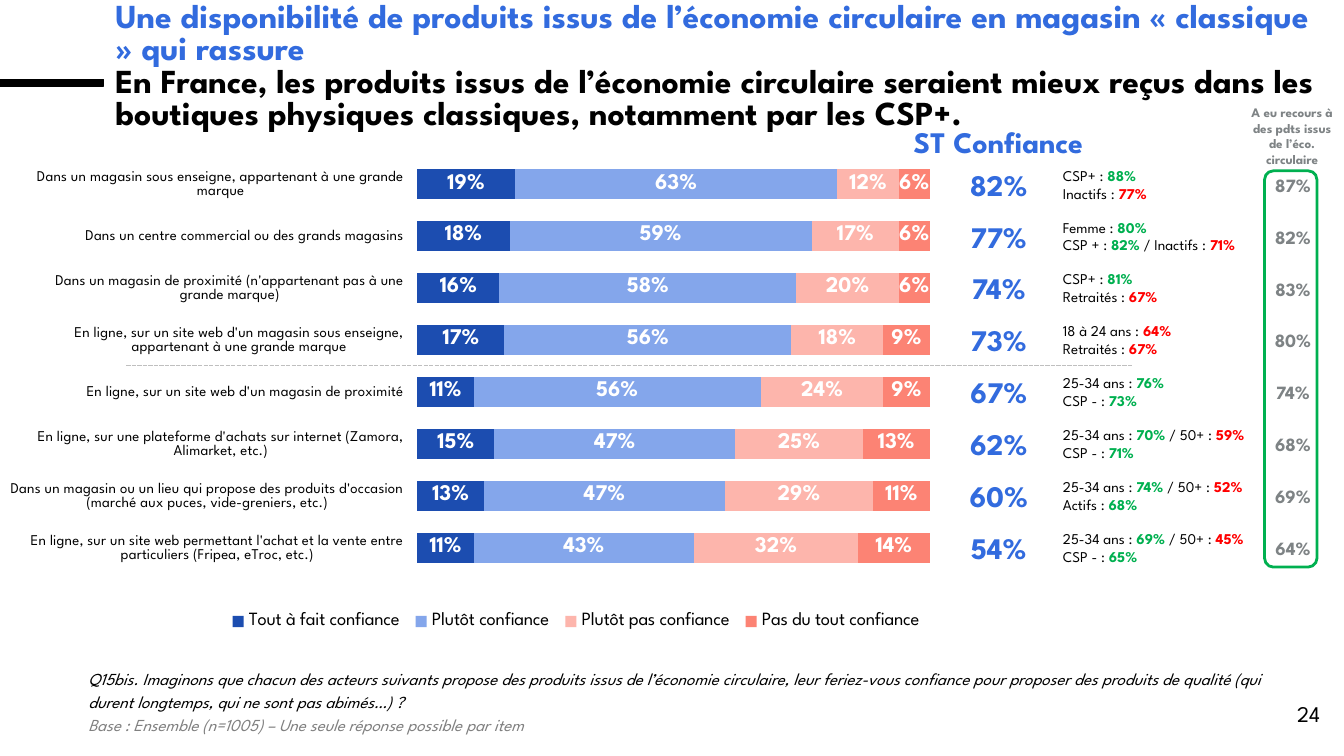
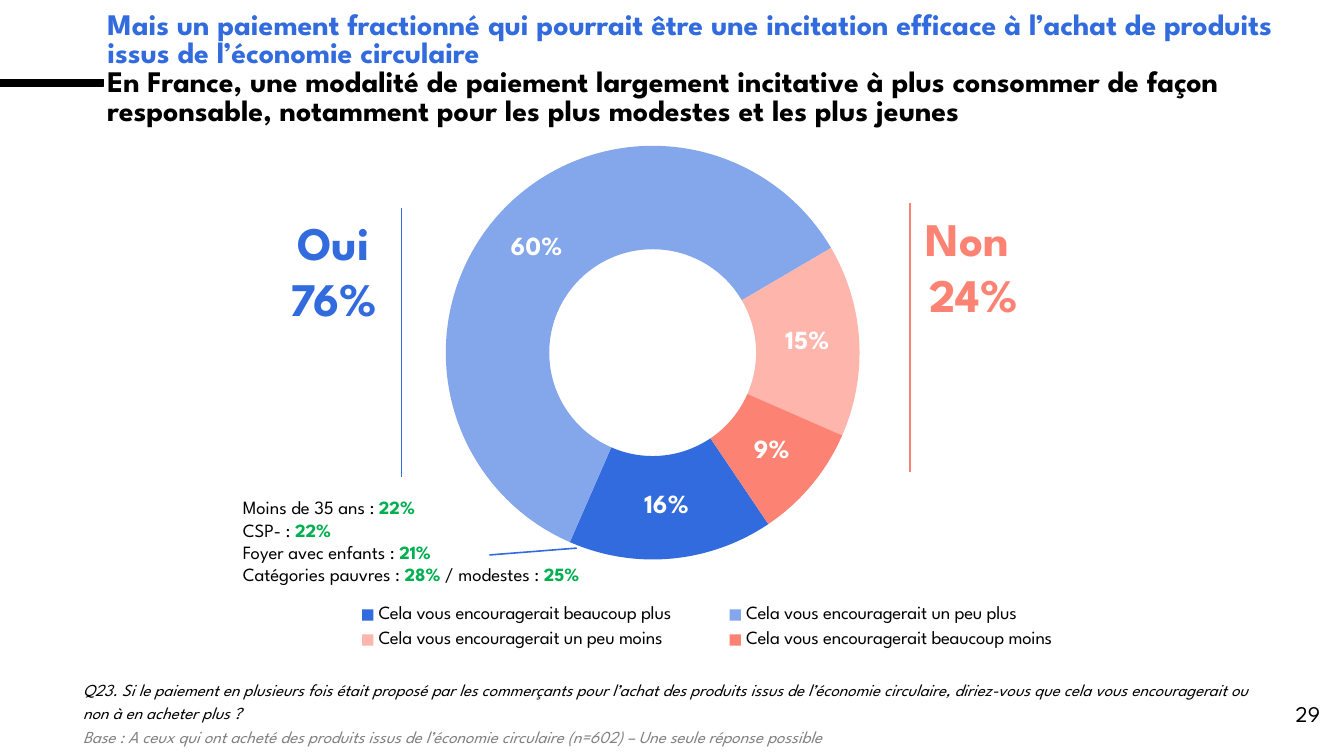
"""Build two survey slides about trust in circular-economy products."""
from dataclasses import dataclass
from typing import NamedTuple

from lxml import etree
from pptx import Presentation
from pptx.chart.chart import Chart
from pptx.chart.data import CategoryChartData
from pptx.dml.color import RGBColor
from pptx.enum.chart import XL_CHART_TYPE, XL_LEGEND_POSITION
from pptx.enum.dml import MSO_LINE
from pptx.enum.shapes import MSO_CONNECTOR, MSO_SHAPE
from pptx.enum.text import MSO_ANCHOR, MSO_AUTO_SIZE, PP_ALIGN
from pptx.oxml.ns import qn
from pptx.slide import Slide
from pptx.text.text import Font, TextFrame
from pptx.util import Cm, Pt

STACKED_BARS = XL_CHART_TYPE.BAR_STACKED_100
DOUGHNUT = XL_CHART_TYPE.DOUGHNUT
LEGEND_BOTTOM = XL_LEGEND_POSITION.BOTTOM
LEGEND_RIGHT = XL_LEGEND_POSITION.RIGHT
STRAIGHT = MSO_CONNECTOR.STRAIGHT
RECTANGLE = MSO_SHAPE.RECTANGLE
ROUNDED = MSO_SHAPE.ROUNDED_RECTANGLE
DASHED = MSO_LINE.SQUARE_DOT
LEFT, CENTER, RIGHT = PP_ALIGN.LEFT, PP_ALIGN.CENTER, PP_ALIGN.RIGHT
TOP, MIDDLE = MSO_ANCHOR.TOP, MSO_ANCHOR.MIDDLE
NO_FIT, GROW = MSO_AUTO_SIZE.NONE, MSO_AUTO_SIZE.SHAPE_TO_FIT_TEXT

FONT = "League Spartan"
BLACK = RGBColor(0x00, 0x00, 0x00)
WHITE = RGBColor(0xFF, 0xFF, 0xFF)
NAVY = RGBColor(0x1C, 0x4D, 0xB0)
BLUE = RGBColor(0x32, 0x6B, 0xDE)
LIGHT_BLUE = RGBColor(0x84, 0xA6, 0xEB)
PINK = RGBColor(0xFD, 0xB5, 0xAC)
CORAL = RGBColor(0xFC, 0x83, 0x74)
GREEN = RGBColor(0x00, 0xB0, 0x50)
RED = RGBColor(0xFF, 0x00, 0x00)
BASE_GRAY = RGBColor(0x80, 0x80, 0x80)
USER_GRAY = RGBColor(0x7E, 0x83, 0x85)
DASH_GRAY = RGBColor(0xBF, 0xBF, 0xBF)

ROW_PITCH = 0.98
SCORE_TOP = 3.02
USER_TOP = 3.16


class Box(NamedTuple):
    """Left, top, width and height in centimetres."""
    left: float
    top: float
    width: float
    height: float

    def lengths(self) -> list[Cm]:
        """Return the four measures as lengths."""
        return [Cm(value) for value in self]


class Span(NamedTuple):
    """A stretch of text in one colour and weight."""
    text: str
    color: RGBColor = BLACK
    bold: bool = False


@dataclass
class Style:
    """Look of a text box."""
    size: float
    color: RGBColor = BLACK
    bold: bool = False
    italic: bool = False
    align: PP_ALIGN = LEFT
    spacing: float = 1.0


@dataclass
class Place:
    """One place of sale: label, answers in percent, totals and subgroups."""
    label: str
    answers: tuple[int, ...]
    trust: int
    users: int
    note: list[list[Span]]


def plain(text: str) -> Span:
    """Return an ordinary span."""
    return Span(text)


def high(percent: int) -> Span:
    """Return a percentage above average."""
    return Span(f"{percent}%", GREEN, True)


def low(percent: int) -> Span:
    """Return a percentage below average."""
    return Span(f"{percent}%", RED, True)


PLACES = [
    Place("Dans un magasin sous enseigne, appartenant à une grande marque",
          (19, 63, 12, 6), 82, 87,
          [[plain("CSP+ : "), high(88)], [plain("Inactifs : "), low(77)]]),
    Place("Dans un centre commercial ou des grands magasins",
          (18, 59, 17, 6), 77, 82,
          [[plain("Femme : "), high(80)],
           [plain("CSP + : "), high(82), plain(" / Inactifs : "), low(71)]]),
    Place("Dans un magasin de proximité (n'appartenant pas à une grande marque)",
          (16, 58, 20, 6), 74, 83,
          [[plain("CSP+ : "), high(81)], [plain("Retraités : "), low(67)]]),
    Place("En ligne, sur un site web d'un magasin sous enseigne, appartenant à une grande marque",
          (17, 56, 18, 9), 73, 80,
          [[plain("18 à 24 ans : "), low(64)], [plain("Retraités : "), low(67)]]),
    Place("En ligne, sur un site web d'un magasin de proximité",
          (11, 56, 24, 9), 67, 74,
          [[plain("25-34 ans : "), high(76)], [plain("CSP - : "), high(73)]]),
    Place("En ligne, sur une plateforme d'achats sur internet (Zamora, Alimarket, etc.)",
          (15, 47, 25, 13), 62, 68,
          [[plain("25-34 ans : "), high(70), plain(" / 50+ : "), low(59)],
           [plain("CSP - : "), high(71)]]),
    Place("Dans un magasin ou un lieu qui propose des produits d'occasion "
          "(marché aux puces, vide-greniers, etc.)",
          (13, 47, 29, 11), 60, 69,
          [[plain("25-34 ans : "), high(74), plain(" / 50+ : "), low(52)],
           [plain("Actifs : "), high(68)]]),
    Place("En ligne, sur un site web permettant l'achat et la vente entre "
          "particuliers (Fripea, eTroc, etc.)",
          (11, 43, 32, 14), 54, 64,
          [[plain("25-34 ans : "), high(69), plain(" / 50+ : "), low(45)],
           [plain("CSP - : "), high(65)]]),
]
TRUST_LEVELS = [("Tout à fait confiance", NAVY), ("Plutôt confiance", LIGHT_BLUE),
                ("Plutôt pas confiance", PINK), ("Pas du tout confiance", CORAL)]
INCENTIVES = [("Cela vous encouragerait beaucoup plus", 0.16, BLUE),
              ("Cela vous encouragerait un peu plus", 0.6, LIGHT_BLUE),
              ("Cela vous encouragerait un peu moins", 0.15, PINK),
              ("Cela vous encouragerait beaucoup moins", 0.09, CORAL)]
INCENTIVE_NOTE = [
    [plain("Moins de 35 ans : "), high(22)],
    [plain("CSP- : "), high(22)],
    [plain("Foyer avec enfants : "), high(21)],
    [plain("Catégories pauvres : "), high(28), plain(" / modestes : "), high(25)],
]


def set_font(font: Font, size: float, color: RGBColor, bold: bool = False,
             italic: bool = False) -> None:
    """Apply the deck font with a size, colour and weight."""
    font.name, font.size, font.bold, font.italic = FONT, Pt(size), bold, italic
    font.color.rgb = color


def add_frame(page: Slide, box: Box) -> TextFrame:
    """Add a wrapping text box that grows with its text."""
    frame = page.shapes.add_textbox(*box.lengths()).text_frame
    frame.word_wrap = True
    frame.auto_size = GROW
    return frame


def add_text(page: Slide, box: Box, text: str, style: Style) -> TextFrame:
    """Add a text box in one style."""
    frame = add_frame(page, box)
    frame.text = text
    for para in frame.paragraphs:
        para.alignment = style.align
        para.line_spacing = style.spacing
        for span in para.runs:
            set_font(span.font, style.size, style.color, style.bold, style.italic)
    return frame


def add_note(page: Slide, box: Box, lines: list[list[Span]], size: float) -> None:
    """Add a text box whose lines mix colours and weights."""
    frame = add_frame(page, box)
    for index, line in enumerate(lines):
        para = frame.add_paragraph() if index else frame.paragraphs[0]
        for part in line:
            span = para.add_run()
            span.text = part.text
            set_font(span.font, size, part.color, part.bold)


def add_line(page: Slide, start: tuple[float, float], end: tuple[float, float],
             color: RGBColor, width: float, dashed: bool = False) -> None:
    """Add a straight line without a shadow."""
    line = page.shapes.add_connector(STRAIGHT, *[Cm(value) for value in (*start, *end)])
    line.line.color.rgb = color
    line.line.width = Pt(width)
    if dashed:
        line.line.dash_style = DASHED
    etree.SubElement(line.element.spPr, qn("a:effectLst"))


def add_page(deck: Presentation, title: str, subtitle: str, title_box: Box, title_size: float,
             question: str, base: str, footer_box: Box, number: int) -> Slide:
    """Add a page with its band, two-part title, footer and number."""
    page = deck.slides.add_slide(deck.slide_layouts[5])
    band = page.shapes.add_shape(RECTANGLE, *Box(0, 1.5, 1.96, 0.13).lengths())
    band.shadow.inherit = False
    band.fill.solid()
    band.fill.fore_color.rgb = band.line.color.rgb = BLACK
    band.line.width = Pt(0.75)

    heading = page.shapes.title
    heading.left, heading.top, heading.width, heading.height = title_box.lengths()
    frame = heading.text_frame
    frame.text = f"{title}\v{subtitle}"
    frame.word_wrap, frame.auto_size, frame.vertical_anchor = True, NO_FIT, TOP
    frame.margin_left = frame.margin_top = frame.margin_right = frame.margin_bottom = 0
    para = frame.paragraphs[0]
    para.alignment, para.line_spacing = LEFT, 0.8
    for span, color in zip(para.runs, (BLUE, BLACK)):
        set_font(span.font, title_size, color, True)

    footer = add_text(page, footer_box, f"{question}\n{base}", Style(9, italic=True, spacing=1.15))
    footer.paragraphs[1].runs[0].font.color.rgb = BASE_GRAY
    folio = add_text(page, Box(23.52, 13.11, 1.68, 0.76), str(number), Style(12, align=RIGHT))
    folio.auto_size, folio.vertical_anchor = NO_FIT, MIDDLE
    return page


def set_layout(host: etree.ElementBase, index: int, area: Box, inner: bool) -> None:
    """Fix a chart part at fractions of the chart area."""
    for old in host.findall(qn("c:layout")):
        host.remove(old)
    layout = etree.Element(qn("c:layout"))
    host.insert(index, layout)
    manual = etree.SubElement(layout, qn("c:manualLayout"))
    settings = [("layoutTarget", "inner")] if inner else []
    settings += [("xMode", "edge"), ("yMode", "edge")]
    settings += zip("xywh", map(str, area))
    for tag, value in settings:
        etree.SubElement(manual, qn(f"c:{tag}")).set("val", value)


def add_chart(page: Slide, kind: XL_CHART_TYPE, box: Box, data: CategoryChartData,
              plot_area: Box, legend_area: Box, legend_side: XL_LEGEND_POSITION,
              label_size: float) -> Chart:
    """Add a chart with white percentage labels and a placed legend."""
    chart = page.shapes.add_chart(kind, *box.lengths(), data).chart
    set_font(chart.font, 18, BLACK)
    chart.has_title = False
    chart.has_legend = True
    chart.legend.position = legend_side
    chart.legend.include_in_layout = False
    set_font(chart.legend.font, 10, BLACK)
    set_layout(chart.element.xpath(".//c:plotArea")[0], 0, plot_area, True)
    set_layout(chart.element.xpath(".//c:legend")[0], 1, legend_area, False)
    for series in chart.plots[0].series:
        labels = series.data_labels
        labels.show_value = True
        labels.number_format, labels.number_format_is_linked = "0%", False
        set_font(labels.font, label_size, WHITE, True)
    return chart


def add_trust_chart(page: Slide) -> None:
    """Add the stacked bars of trust by place of sale."""
    data = CategoryChartData(number_format="0%")
    data.categories = [place.label for place in PLACES]
    for index, (name, _) in enumerate(TRUST_LEVELS):
        data.add_series(name, [place.answers[index] / 100 for place in PLACES])
    chart = add_chart(page, STACKED_BARS, Box(0.2, 2.79, 17.37, 9.53), data,
                      Box(0.435, 0.021, 0.565, 0.825), Box(0.22, 0.91, 0.78, 0.06),
                      LEGEND_BOTTOM, 12)
    plot = chart.plots[0]
    plot.gap_width, plot.overlap, plot.vary_by_categories = 70, 100, False
    for series, (_, color) in zip(plot.series, TRUST_LEVELS):
        series.format.fill.solid()
        series.format.fill.fore_color.rgb = color
    places, shares = chart.category_axis, chart.value_axis
    places.reverse_order = True
    places.format.line.fill.background()
    set_font(places.tick_labels.font, 8, BLACK)
    shares.minimum_scale, shares.maximum_scale = 0, 1
    shares.has_major_gridlines = shares.visible = False


def add_incentive_chart(page: Slide) -> None:
    """Add the ring of answers on split payment."""
    data = CategoryChartData(number_format="0%")
    data.categories = [name for name, _, _ in INCENTIVES]
    data.add_series("Series 1", [share for _, share, _ in INCENTIVES])
    chart = add_chart(page, DOUGHNUT, Box(2.36, 1.55, 21.16, 10.97), data,
                      Box(0.183, 0.11, 0.577, 0.713), Box(0.165, 0.89, 0.71, 0.1),
                      LEGEND_RIGHT, 14)
    chart.plots[0].vary_by_categories = True
    for index, (_, _, color) in enumerate(INCENTIVES):
        fill = chart.plots[0].series[0].points[index].format.fill
        fill.solid()
        fill.fore_color.rgb = color
    chart.element.xpath(".//c:firstSliceAng")[0].set("val", "146")
    chart.element.xpath(".//c:holeSize")[0].set("val", "60")


def build_trust_page(deck: Presentation) -> None:
    """Build the page on trust by place of sale."""
    page = add_page(
        deck,
        "Une disponibilité de produits issus de l’économie circulaire en magasin "
        "« classique » qui rassure",
        "En France, les produits issus de l’économie circulaire seraient mieux reçus dans les "
        "boutiques physiques classiques, notamment par les CSP+.",
        Box(2.18, 0.05, 23.01, 1.52), 18,
        "Q15bis. Imaginons que chacun des acteurs suivants propose des produits issus de "
        "l’économie circulaire, leur feriez-vous confiance pour proposer des produits de "
        "qualité (qui durent longtemps, qui ne sont pas abimés…) ?",
        "Base : Ensemble (n=1005) – Une seule réponse possible par item",
        Box(1.42, 12.45, 22.73, 1.55), 24)
    add_trust_chart(page)
    score_style = Style(16, BLUE, True, align=CENTER)
    user_style = Style(10, USER_GRAY, True, align=CENTER)
    add_text(page, Box(16.71, 2.21, 4.32, 0.94), "ST Confiance", score_style)
    add_text(page, Box(23.29, 1.85, 2.26, 1.45),
             "A eu recours à des pdts issus de l’éco. circulaire",
             Style(7, USER_GRAY, True, align=CENTER))
    for index, place in enumerate(PLACES):
        top = SCORE_TOP + index * ROW_PITCH
        user_top = USER_TOP + index * ROW_PITCH
        add_text(page, Box(17.63, top, 2.49, 0.94), f"{place.trust}%", score_style)
        add_note(page, Box(19.84, top, 4.67, 0.94), place.note, 8)
        add_text(page, Box(23.19, user_top, 2.49, 0.69), f"{place.users}%", user_style)
    outline = page.shapes.add_shape(ROUNDED, *Box(23.9, 3.23, 0.99, 7.49).lengths())
    outline.shadow.inherit = False
    outline.fill.background()
    outline.line.color.rgb = GREEN
    outline.line.width = Pt(1.5)
    add_line(page, (2.39, 6.91), (21.39, 6.91), DASH_GRAY, 0.75, True)


def build_payment_page(deck: Presentation) -> None:
    """Build the page on split payment."""
    page = add_page(
        deck,
        "Mais un paiement fractionné qui pourrait être une incitation efficace à l’achat de "
        "produits issus de l’économie circulaire",
        "En France, une modalité de paiement largement incitative à plus consommer de façon "
        "responsable, notamment pour les plus modestes et les plus jeunes",
        Box(2.03, 0.23, 22.73, 1.57), 16,
        "Q23. Si le paiement en plusieurs fois était proposé par les commerçants pour l’achat "
        "des produits issus de l’économie circulaire, diriez-vous que cela vous encouragerait "
        "ou non à en acheter plus ?",
        "Base : A ceux qui ont acheté des produits issus de l’économie circulaire (n=602) – "
        "Une seule réponse possible",
        Box(1.32, 12.67, 22.73, 1.55), 29)
    add_incentive_chart(page)
    for box, text, color, line_left, line_top in (
            (Box(4.19, 3.91, 4.22, 2.39), "Oui\n76%", BLUE, 7.59, 3.94),
            (Box(16.56, 3.84, 3.68, 2.39), "Non \n24%", CORAL, 17.2, 3.84)):
        add_text(page, box, text, Style(25, color, True, align=CENTER))
        add_line(page, (line_left, line_top), (line_left, line_top + 5.08), color, 0.85)
    add_note(page, Box(4.34, 9.25, 8.74, 1.96), INCENTIVE_NOTE, 10)
    add_line(page, (10.9, 10.36), (9.25, 10.49), BLUE, 0.85)


def main() -> None:
    """Build and save the deck."""
    deck = Presentation()
    deck.slide_width, deck.slide_height = Cm(25.4), Cm(14.29)
    build_trust_page(deck)
    build_payment_page(deck)
    deck.save("out.pptx")


if __name__ == "__main__":
    main()
